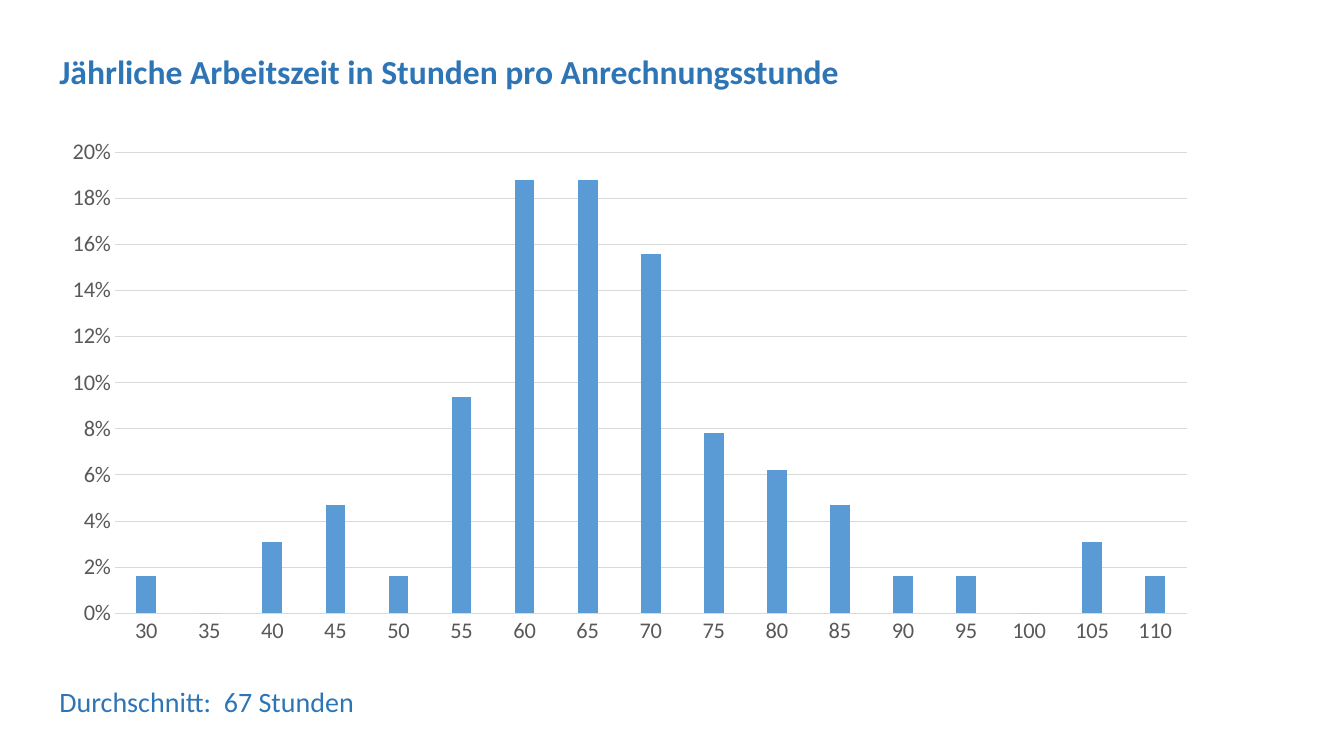
from pptx import Presentation
from pptx.chart.data import CategoryChartData
from pptx.dml.color import RGBColor
from pptx.enum.chart import XL_CHART_TYPE, XL_TICK_MARK
from pptx.enum.text import MSO_AUTO_SIZE
from pptx.util import Inches, Pt

FONT = "Calibri"
TITLE_BLUE = "2E75B6"
BAR_BLUE = "5B9BD5"
LABEL_GREY = "595959"
LINE_GREY = "D9D9D9"
HOURS = range(30, 111, 5)
SHARES = [0.016, 0, 0.031, 0.047, 0.016, 0.094, 0.188, 0.188, 0.156,
          0.078, 0.062, 0.047, 0.016, 0.016, 0, 0.031, 0.016]


def rgb(color):
    """Return the colour for a hex string."""
    return RGBColor.from_string(color)


def set_font(font, size, color, bold=False):
    """Set typeface, size, colour and weight."""
    font.name = FONT
    font.size = Pt(size)
    font.bold = bold
    font.color.rgb = rgb(color)


def set_line(line):
    """Draw a thin grey line."""
    line.color.rgb = rgb(LINE_GREY)
    line.width = Pt(0.75)


def add_text(s, top, height, text, size, bold=False):
    """Add a full-width line of blue text."""
    sp = s.shapes.add_textbox(Inches(0.49), Inches(top), Inches(11.81), Inches(height))
    tf = sp.text_frame
    tf.word_wrap = True
    tf.auto_size = MSO_AUTO_SIZE.SHAPE_TO_FIT_TEXT
    p = tf.paragraphs[0]
    p.text = text
    set_font(p.font, size, TITLE_BLUE, bold)


def style_axis(axis):
    """Remove tick marks and set the label font."""
    axis.major_tick_mark = axis.minor_tick_mark = XL_TICK_MARK.NONE
    set_font(axis.tick_labels.font, 16, LABEL_GREY)


def add_histogram(s):
    """Add the column chart of hours per credit hour."""
    data = CategoryChartData(number_format="0%")
    data.categories = [str(hours) for hours in HOURS]
    data.add_series("Series 1", SHARES)
    chart = s.shapes.add_chart(XL_CHART_TYPE.COLUMN_CLUSTERED, Inches(0.49), Inches(1.27),
                               Inches(11.51), Inches(5.23), data).chart
    chart.has_legend = False
    chart.has_title = False
    set_font(chart.font, 10, "000000")

    plot = chart.plots[0]
    plot.gap_width = 219
    plot.overlap = -27
    plot.vary_by_categories = False
    fill = plot.series[0].format.fill
    fill.solid()
    fill.fore_color.rgb = rgb(BAR_BLUE)

    style_axis(chart.category_axis)
    set_line(chart.category_axis.format.line)

    axis = chart.value_axis
    style_axis(axis)
    axis.minimum_scale = 0
    axis.maximum_scale = 0.2
    axis.major_unit = 0.02
    axis.tick_labels.number_format = "0%"
    axis.tick_labels.number_format_is_linked = False
    axis.format.line.fill.background()
    axis.has_major_gridlines = True
    set_line(axis.major_gridlines.format.line)


def main():
    """Build and save the slide."""
    prs = Presentation()
    prs.slide_width = Inches(13.33)
    prs.slide_height = Inches(7.5)
    s = prs.slides.add_slide(prs.slide_layouts[6])
    add_text(s, 0.46, 0.5, "Jährliche Arbeitszeit in Stunden pro Anrechnungsstunde", 24, bold=True)
    add_histogram(s)
    add_text(s, 6.74, 0.44, "Durchschnitt:  67 Stunden", 20)
    prs.save("out.pptx")


if __name__ == "__main__":
    main()
